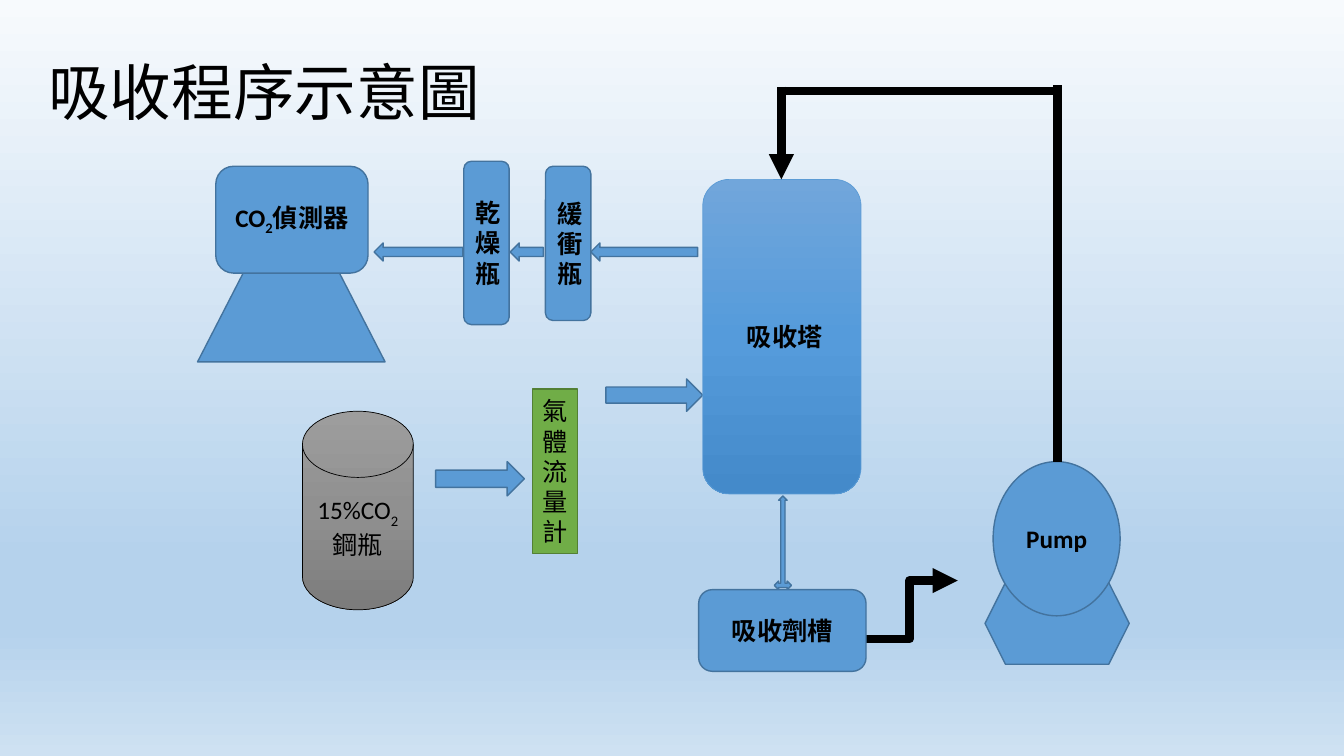
from copy import deepcopy

from pptx import Presentation
from pptx import util as u
from pptx.dml.color import RGBColor
from pptx.enum import shapes, text
from pptx.oxml.ns import qn
from pptx.oxml.xmlchemy import OxmlElement

CELL = u.Inches(0.1)
SHAPE = shapes.MSO_SHAPE
LINK = shapes.MSO_CONNECTOR
BLUE, BLUE_EDGE = "5B9BD5", "43739E"
GREEN, GREEN_EDGE = "70AD47", "538035"
BLACK = "000000"
STEEL = [(0, "9D9D9D"), (0.5, "909090"), (1, "7C7C7C")]
TOWER = [(0, "71A6DB"), (0.5, "559BDB"), (1, "448ACA")]
SKY = [(0, "F7FAFD"), (0.74, "B5D2EC"), (0.83, "B5D2EC"), (1, "CEE1F2")]


def color(hex_code):
    """Turn a hex string into a colour."""
    return RGBColor.from_string(hex_code)


def cells(*counts):
    """Turn grid counts into lengths."""
    return [round(n * CELL) for n in counts]


def paint(fill, element, look):
    """Fill with one colour or with a top-to-bottom gradient."""
    if isinstance(look, str):
        fill.solid()
        fill.fore_color.rgb = color(look)
        return
    fill.gradient()
    fill.gradient_angle = 270
    stop_list = next(element.iter(qn("a:gsLst")))
    while len(stop_list) < len(look):
        stop_list.append(deepcopy(stop_list[0]))
    for stop, (position, hex_code) in zip(fill.gradient_stops, look):
        stop.position = position
        stop.color.rgb = color(hex_code)


def write(sp, label, bold):
    """Write a centred label, with subscripts set between bars."""
    tf = sp.text_frame
    tf.word_wrap = True
    tf.vertical_anchor = text.MSO_ANCHOR.MIDDLE
    p = tf.paragraphs[0]
    p.alignment = text.PP_ALIGN.CENTER
    for i, piece in enumerate(label.split("|")):
        r = p.add_run()
        r.text = piece
        r.font.name, r.font.size, r.font.bold = "Calibri", u.Pt(18), bold
        r.font.color.rgb = color(BLACK)
        if i % 2:
            r.font._element.set("baseline", "-25000")


def part(s, box, kind, at, label="", bold=True, look=BLUE, edge=BLUE_EDGE, width=1):
    """Place a preset shape at grid offsets from the box's corner."""
    x, y, w, h = at
    sp = s.shapes.add_shape(kind, *cells(box[0] + x, box[1] + y, w, h))
    sp.shadow.inherit = False
    paint(sp.fill, sp._element, look)
    sp.line.color.rgb = color(edge)
    sp.line.width = u.Pt(width)
    if label:
        write(sp, label, bold)


def pipe(s, box, start, end, arrow=False, kind=LINK.STRAIGHT):
    """Draw a thick black pipe between two grid offsets."""
    x, y = box
    ends = cells(x + start[0], y + start[1], x + end[0], y + end[1])
    c = s.shapes.add_connector(kind, *ends)
    c.line.color.rgb = color(BLACK)
    c.line.width = u.Pt(6)
    if arrow:
        tail = OxmlElement("a:tailEnd")
        tail.set("type", "triangle")
        c.line._get_or_add_ln().append(tail)
    c._element.spPr.append(OxmlElement("a:effectLst"))


def title(s, at):
    """Place the slide title."""
    sp = s.shapes.title
    sp.left, sp.top, sp.width, sp.height = cells(*at)
    tf = sp.text_frame
    tf.text = "吸收程序示意圖"
    tf.vertical_anchor = text.MSO_ANCHOR.TOP
    p = tf.paragraphs[0]
    p.alignment = text.PP_ALIGN.LEFT
    font = p.runs[0].font
    font.name, font.size = "Calibri", u.Pt(44)
    font.color.rgb = color(BLACK)


def gas_supply(s, box):
    """Draw the gas cylinder, the flow meter and their arrows."""
    part(s, box, SHAPE.FLOWCHART_MAGNETIC_DISK, (0, 3.2, 11, 19.7),
         "15%CO|2|鋼瓶", False, STEEL, BLACK, 0.5)
    part(s, box, SHAPE.RIGHT_ARROW, (13.2, 8.2, 8.8, 3.4))
    part(s, box, SHAPE.RECTANGLE, (22.8, 1, 4.5, 16.3),
         "氣體流量計", False, GREEN, GREEN_EDGE)
    part(s, box, SHAPE.RIGHT_ARROW, (30.1, 0, 9.6, 3.2))


def absorption(s, box):
    """Draw the tower, the absorbent tank and the pipe to the pump."""
    part(s, box, SHAPE.ROUNDED_RECTANGLE, (0.4, 0, 15.7, 31.2),
         " 吸收塔", True, TOWER, BLUE, 0.5)
    part(s, box, SHAPE.LEFT_RIGHT_UP_ARROW, (7.5, 31.4, 1.7, 9.3))
    pipe(s, box, (16.1, 45.6), (25.7, 39.8), True, LINK.ELBOW)
    part(s, box, SHAPE.ROUNDED_RECTANGLE, (0, 40.7, 16.6, 8.1), "吸收劑槽")


def pump_loop(s, box):
    """Draw the pump and the return pipe to the tower."""
    part(s, box, SHAPE.HEXAGON, (20.2, 49.4, 14.3, 8.1))
    part(s, box, SHAPE.OVAL, (21, 37.4, 12.6, 15.3), "Pump")
    pipe(s, box, (27.4, 37.4), (27.4, 0))
    pipe(s, box, (27.4, 0.6), (0.2, 0.6))
    pipe(s, box, (0, 0.2), (0, 9.4), True)


def analysis(s, box):
    """Draw the two bottles and the detector on its stand."""
    part(s, box, SHAPE.ISOSCELES_TRIANGLE, (0, 1.8, 18.6, 18.1))
    for left, width in ((39, 10.6), (31, 3.3), (17.5, 8.8)):
        part(s, box, SHAPE.LEFT_ARROW, (left, 8.1, width, 1.8))
    part(s, box, SHAPE.ROUNDED_RECTANGLE, (34.5, 0.5, 4.5, 15.3), "緩衝瓶")
    part(s, box, SHAPE.ROUNDED_RECTANGLE, (26.4, 0, 4.5, 16.2), "乾燥瓶")
    part(s, box, SHAPE.FLOWCHART_ALTERNATE_PROCESS, (1.8, 0.5, 15.1, 10.6),
         "CO|2|偵測器")


def main():
    """Build the absorption process slide."""
    prs = Presentation()
    prs.slide_width, prs.slide_height = u.Inches(13.33), u.Inches(7.5)
    s = prs.slides.add_slide(prs.slide_layouts[5])
    paint(s.background.fill, s._element, SKY)
    title(s, (3.8, 4.8, 49.1, 8.4))
    gas_supply(s, (30, 37.6))
    absorption(s, (69.3, 17.8))
    pump_loop(s, (77.5, 8.4))
    analysis(s, (19.6, 16))
    prs.save("out.pptx")


if __name__ == "__main__":
    main()
